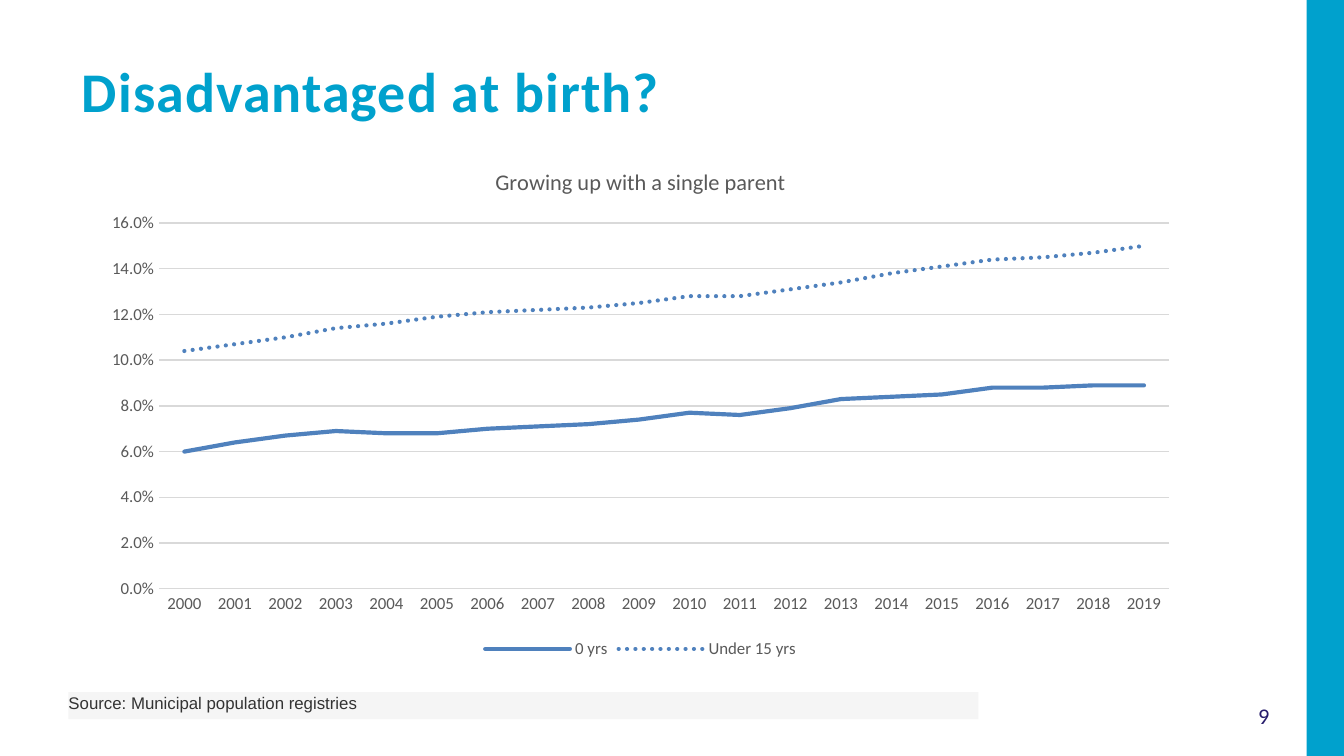
from pptx import Presentation
from pptx.chart.data import CategoryChartData
from pptx.dml.color import RGBColor
from pptx.enum.chart import XL_CHART_TYPE, XL_LEGEND_POSITION, XL_MARKER_STYLE, XL_TICK_MARK
from pptx.enum.dml import MSO_LINE
from pptx.enum.shapes import MSO_SHAPE
from pptx.enum.text import MSO_ANCHOR, PP_ALIGN
from pptx.oxml.ns import qn
from pptx.util import Pt

RECT = MSO_SHAPE.RECTANGLE
MIDDLE, TOP = MSO_ANCHOR.MIDDLE, MSO_ANCHOR.TOP
LEFT, CENTER = PP_ALIGN.LEFT, PP_ALIGN.CENTER
NO_TICK = XL_TICK_MARK.NONE

COLORS = {"accent": "00A1CD", "number": "271D6C", "series": "4F81BD", "grid": "D9D9D9",
          "label": "595959", "source_fill": "F5F5F5", "source": "333333"}

TITLE = "Disadvantaged at birth?"
SOURCE = "Source: Municipal population registries"
PAGE = "9"
CHART_TITLE = "Growing up with a single parent"
YEARS = range(2000, 2020)
SERIES = [
    ("0 yrs", MSO_LINE.SOLID,
     [6.0, 6.4, 6.7, 6.9, 6.8, 6.8, 7.0, 7.1, 7.2, 7.4,
      7.7, 7.6, 7.9, 8.3, 8.4, 8.5, 8.8, 8.8, 8.9, 8.9]),
    ("Under 15 yrs", MSO_LINE.ROUND_DOT,
     [10.4, 10.7, 11.0, 11.4, 11.6, 11.9, 12.1, 12.2, 12.3, 12.5,
      12.8, 12.8, 13.1, 13.4, 13.8, 14.1, 14.4, 14.5, 14.7, 15.0]),
]

SLIDE_W, SLIDE_H, BAND_W = 720, 405, 20
BAND_X = SLIDE_W - BAND_W
MARGIN = 36.7
NUMBER_W = 46


def rgb(name):
    return RGBColor.from_string(COLORS[name])


def box(x, y, w, h):
    return [Pt(v) for v in (x, y, w, h)]


def style_font(font, size, color, name="Calibri", bold=False):
    font.size, font.name, font.bold = Pt(size), name, bold
    font.color.rgb = rgb(color)


def style_line(line, color, width):
    line.color.rgb = rgb(color)
    line.width = Pt(width)


def add_rect(s, bounds, color):
    sp = s.shapes.add_shape(RECT, *bounds)
    sp.shadow.inherit = False
    sp.fill.solid()
    sp.fill.fore_color.rgb = rgb(color)
    sp.line.fill.background()
    return sp


def write(sp, text, size, color, anchor, align, name="Calibri", bold=False):
    tf = sp.text_frame
    tf.text = text
    tf.word_wrap = True
    tf.vertical_anchor = anchor
    p = tf.paragraphs[0]
    p.alignment = align
    style_font(p.runs[0].font, size, color, name, bold)
    return tf


def add_line_chart(s, bounds):
    data = CategoryChartData(number_format="0.0%")
    data.categories = [str(year) for year in YEARS]
    for name, _, percents in SERIES:
        data.add_series(name, [round(v / 100, 3) for v in percents])
    chart = s.shapes.add_chart(XL_CHART_TYPE.LINE, *bounds, data).chart
    chart.font.size, chart.font.name = Pt(10), "Calibri"

    chart.has_title = True
    tf = chart.chart_title.text_frame
    tf.text = CHART_TITLE
    style_font(tf.paragraphs[0].runs[0].font, 12, "label")
    chart.chart_title.include_in_layout = False

    chart.has_legend = True
    chart.legend.position = XL_LEGEND_POSITION.BOTTOM
    chart.legend.include_in_layout = False
    style_font(chart.legend.font, 9, "label")

    for axis in (chart.category_axis, chart.value_axis):
        axis.major_tick_mark = axis.minor_tick_mark = NO_TICK
        style_font(axis.tick_labels.font, 9, "label")
    style_line(chart.category_axis.format.line, "grid", 0.75)
    values = chart.value_axis
    values.minimum_scale, values.maximum_scale, values.major_unit = 0, 0.16, 0.02
    values.tick_labels.number_format = "0.0%"
    values.tick_labels.number_format_is_linked = False
    values.format.line.fill.background()
    style_line(values.major_gridlines.format.line, "grid", 0.75)

    for series, (_, dash, _) in zip(chart.plots[0].series, SERIES):
        series.smooth = False
        series.marker.style = XL_MARKER_STYLE.NONE
        line = series.format.line
        style_line(line, "series", 2.25)
        line.dash_style = dash
        series._element.find(qn("c:spPr")).find(qn("a:ln")).set("cap", "rnd")


prs = Presentation()
prs.slide_width, prs.slide_height = Pt(SLIDE_W), Pt(SLIDE_H)
s = prs.slides.add_slide(prs.slide_layouts.get_by_name("Title Only"))

add_rect(s, box(BAND_X, 0, BAND_W, SLIDE_H), "accent")

title = s.shapes.title
title.left, title.top, title.width, title.height = box(MARGIN, 26.6, 601, 40)
tf = write(title, TITLE, 30, "accent", TOP, LEFT, bold=True)
tf.paragraphs[0].runs[0].font._element.set("spc", "60")

add_line_chart(s, box(48.2, 77.8, 590, 278))

source = add_rect(s, box(MARGIN, 370.8, 487.5, 14.5), "source_fill")
tf = write(source, SOURCE, 9, "source", MIDDLE, LEFT, name="Arial")
tf.margin_left = tf.margin_top = tf.margin_right = 0
tf.margin_bottom = Pt(3.6)

number = s.shapes.add_textbox(*box(BAND_X - NUMBER_W, 371, NUMBER_W, 25))
write(number, PAGE, 12, "number", MIDDLE, CENTER)

prs.save("out.pptx")
